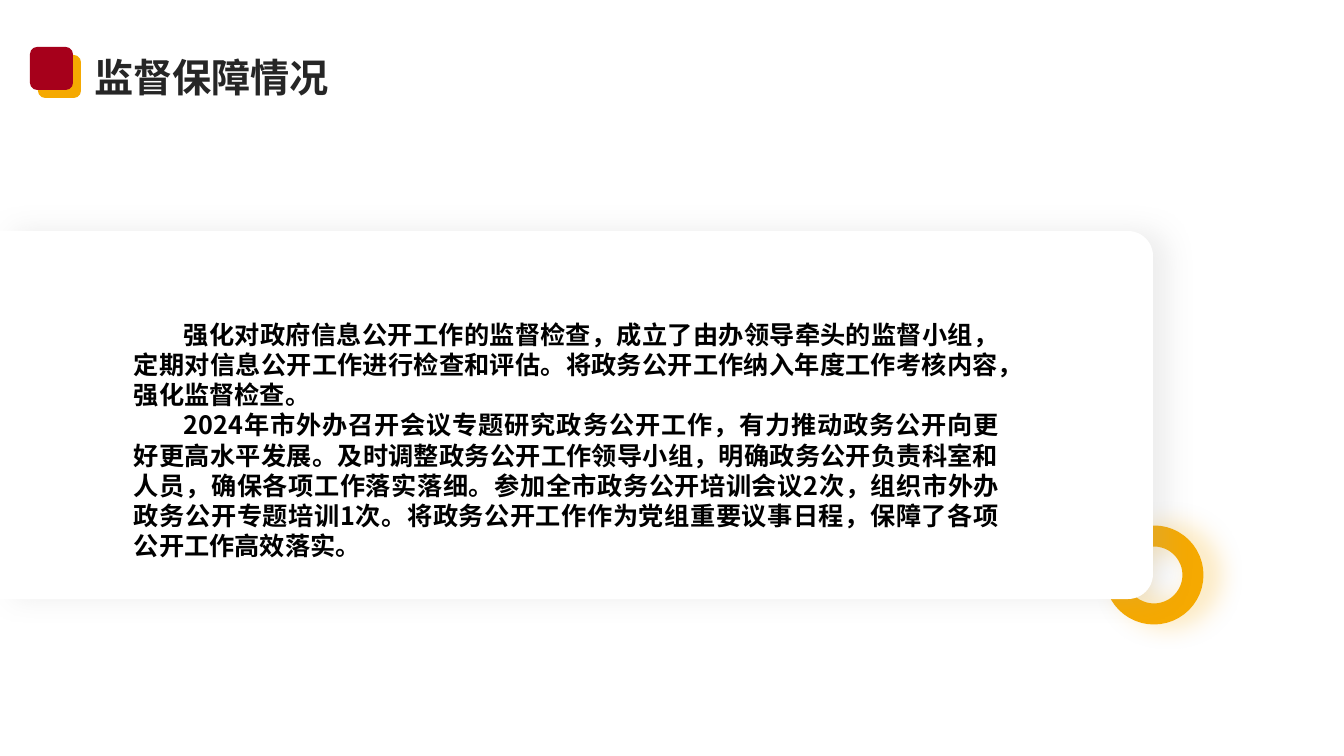
from pptx import Presentation
from pptx.dml.color import RGBColor
from pptx.enum.shapes import MSO_SHAPE
from pptx.enum.text import MSO_ANCHOR, PP_ALIGN
from pptx.oxml.ns import qn
from pptx.util import Pt
from lxml import etree

EMU_PER_PX = 914400 / 100.8
WHITE = RGBColor(0xFF, 0xFF, 0xFF)
BLACK = RGBColor(0x00, 0x00, 0x00)
CHARCOAL = RGBColor(0x26, 0x26, 0x26)
GRAY = RGBColor(0xA6, 0xA6, 0xA6)
GOLD = RGBColor(0xF5, 0xA9, 0x01)
CRIMSON = RGBColor(0xA6, 0x00, 0x1B)

HEADING = "监督保障情况"
REPORT = [
    "强化对政府信息公开工作的监督检查，成立了由办领导牵头的监督小组，"
    "定期对信息公开工作进行检查和评估。将政务公开工作纳入年度工作考核内容，"
    "强化监督检查。",
    "2024年市外办召开会议专题研究政务公开工作，有力推动政务公开向更好更高水平发展。"
    "及时调整政务公开工作领导小组，明确政务公开负责科室和人员，确保各项工作落实落细。"
    "参加全市政务公开培训会议2次，组织市外办政务公开专题培训1次。"
    "将政务公开工作作为党组重要议事日程，保障了各项公开工作高效落实。",
]


def px(length):
    return round(length * EMU_PER_PX)


class SlideBuilder:
    font = "Noto Sans CJK SC"

    def __init__(self, presentation):
        self.slide = presentation.slides.add_slide(presentation.slide_layouts[6])

    def shape(self, kind, left, top, width, height, fill=None, parent=None):
        shapes = (parent or self.slide).shapes
        item = shapes.add_shape(kind, px(left), px(top), px(width), px(height))
        item.shadow.inherit = False
        item.line.fill.background()
        if fill is None:
            item.fill.background()
        else:
            item.fill.solid()
            item.fill.fore_color.rgb = fill
        return item

    def ring(self, left, top, size, color, weight):
        ring = self.shape(MSO_SHAPE.OVAL, left, top, size, size)
        ring.line.color.rgb = color
        ring.line.width = Pt(weight)
        return ring

    def right_rounded_card(self, left, top, width, height, rounding):
        # The preset rounds its top corners, so a quarter turn puts them on the right
        shift = (width - height) / 2
        card = self.shape(MSO_SHAPE.ROUND_2_SAME_RECTANGLE,
                          left + shift, top - shift, height, width, WHITE)
        card.rotation = 90
        card.adjustments[0] = rounding
        card.adjustments[1] = 0
        return card

    def soft_shadow(self, item, color, opacity):
        effects = item._element.spPr.find(qn("a:effectLst"))
        shadow = etree.SubElement(effects, qn("a:outerShdw"), blurRad=str(Pt(20)),
                                  dist=str(Pt(10)), dir="0", algn="l", rotWithShape="0")
        tint = etree.SubElement(shadow, qn("a:srgbClr"), val=str(color))
        etree.SubElement(tint, qn("a:alpha"), val=str(opacity * 1000))

    def text(self, left, top, width, height, paragraphs, size, color):
        box = self.slide.shapes.add_textbox(px(left), px(top), px(width), px(height))
        frame = box.text_frame
        frame.word_wrap = True
        frame.text = "\n".join(paragraphs)
        for paragraph in frame.paragraphs:
            for run in paragraph.runs:
                run.font.size = Pt(size)
                run.font.bold = True
                run.font.color.rgb = color
                run.font.name = self.font
                properties = run.font._element
                properties.set("lang", "zh-CN")
                etree.SubElement(properties, qn("a:ea"), typeface=self.font)
        return frame

    def title(self, left, top, width, height, wording):
        frame = self.text(left, top, width, height, [wording], 28, CHARCOAL)
        frame.margin_left = frame.margin_right = 0
        frame.margin_top = frame.margin_bottom = 0
        frame.vertical_anchor = MSO_ANCHOR.MIDDLE
        frame.paragraphs[0].line_spacing = 1.1

    def body(self, left, top, width, height, paragraphs):
        frame = self.text(left, top, width, height, paragraphs, 18, BLACK)
        for paragraph in frame.paragraphs:
            paragraph.alignment = PP_ALIGN.JUSTIFY
            properties = paragraph._p.get_or_add_pPr()
            properties.set("marL", "0")
            properties.set("indent", str(px(50)))


def main():
    presentation = Presentation()
    presentation.slide_width = px(1344)
    presentation.slide_height = px(756)
    builder = SlideBuilder(presentation)

    # Gold ring behind the card
    ring = builder.ring(1115, 536, 78, GOLD, 15)
    builder.soft_shadow(ring, GOLD, 32)

    # White card running in from the left edge
    card = builder.right_rounded_card(0, 231, 1153, 368, 0.068)
    builder.soft_shadow(card, GRAY, 20)

    # Heading with its two overlapping squares
    builder.title(94, 49, 1176, 51, HEADING)
    emblem = builder.slide.shapes.add_group_shape()
    for left, top, color in [(38, 55, GOLD), (30, 47, CRIMSON)]:
        builder.shape(MSO_SHAPE.ROUNDED_RECTANGLE, left, top, 43, 43, color, emblem)

    # Report text
    builder.body(124, 314, 885, 254, REPORT)

    presentation.save("out.pptx")


if __name__ == "__main__":
    main()
